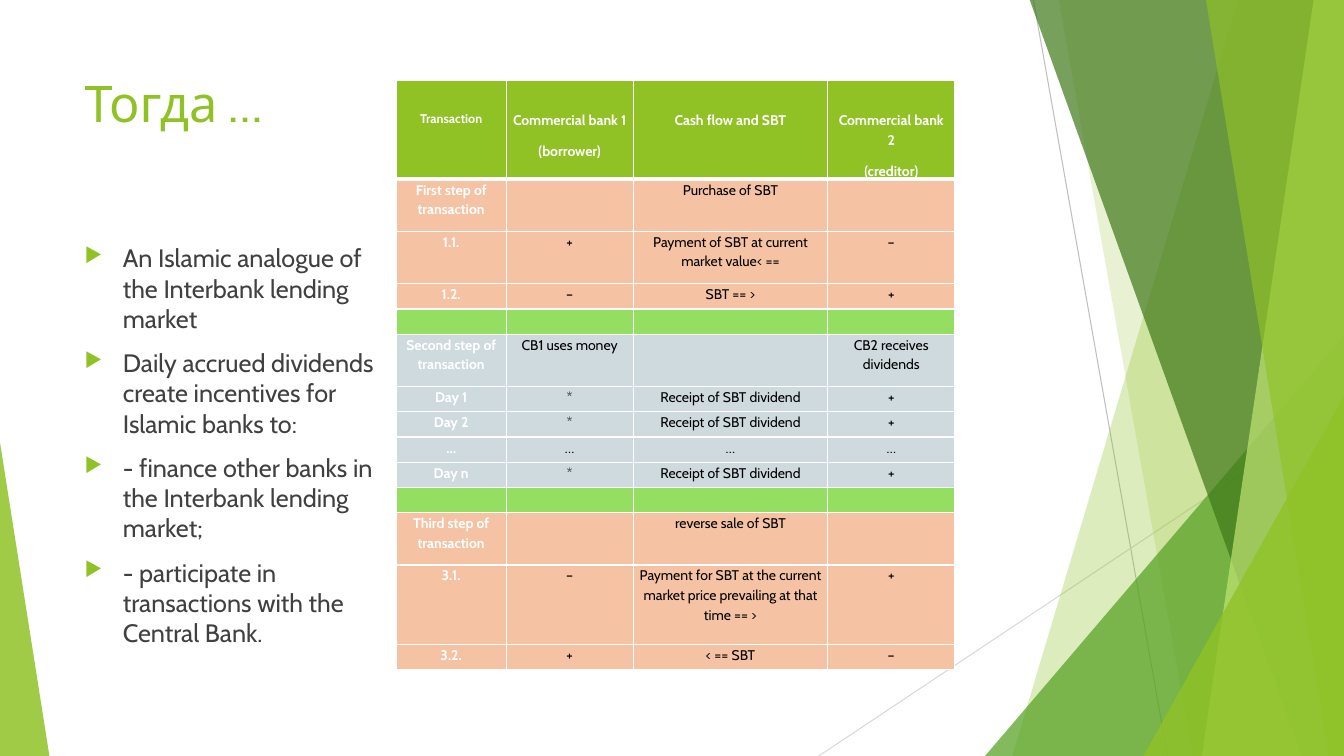
from lxml.etree import SubElement
from pptx import Presentation
from pptx.dml.color import RGBColor
from pptx.enum.shapes import MSO_CONNECTOR, MSO_SHAPE
from pptx.enum.text import PP_ALIGN
from pptx.oxml.ns import qn
from pptx.util import Pt

PX = 9144  # 100 px to the inch
WIDTH, HEIGHT = 1333, 750
FONT = "Cabin"
COLOURS = {
    "lime": "90C226", "green": "54A021", "forest": "3F7819", "pale": "C0E474",
    "silver": "BFBFBF", "mist": "D9D9D9", "text": "404040", "black": "000000",
    "white": "FFFFFF", "peach": "F5C2A3", "gap": "94DE61", "steel": "CFDADF",
}


def rgb(name):
    return RGBColor.from_string(COLOURS[name])


def style(paragraph, size, colour, bold=False):
    paragraph.font.name = FONT
    paragraph.font.size = Pt(size)
    paragraph.font.color.rgb = rgb(colour)
    paragraph.font.bold = bold


presentation = Presentation()
presentation.slide_width, presentation.slide_height = WIDTH * PX, HEIGHT * PX
slide = presentation.slides.add_slide(presentation.slide_layouts[6])
shapes = slide.shapes

# Thin crossing lines
for x1, y1, x2, y2, colour in [
    (1025, 0, 1158, 750, "silver"),
    (1333, 403, 812, 750, "mist"),
]:
    ray = shapes.add_connector(
        MSO_CONNECTOR.STRAIGHT, x1 * PX, y1 * PX, x2 * PX, y2 * PX)
    ray.line.color.rgb = rgb(colour)
    ray.line.width = Pt(0.75)
    SubElement(ray._element.spPr, qn("a:effectLst"))

# Facets: a band to the right edge is (top x, bottom x),
# a triangle on the bottom edge is (left, top, width, apex)
facets = [
    ((1228, 1004), "lime", 30),
    ((1050, 1183), "lime", 20),
    ((977, 333, 356, 1), "green", 72),
    ((1021, 1291), "forest", 70),
    ((1303, 1192), "pale", 70),
    ((1196, 1318), "lime", 65),
    ((1134, 393, 199, 1), "lime", 80),
    ((0, 439, 49, 0), "lime", 85),
]
for outline, colour, opacity in facets:
    if len(outline) == 2:
        top_x, bottom_x = outline
        builder = shapes.build_freeform(top_x, -1, scale=PX)
        builder.add_line_segments(
            [(WIDTH, -1), (WIDTH, HEIGHT), (bottom_x, HEIGHT)], close=True)
        facet = builder.convert_to_shape()
    else:
        left, top, width, apex = outline
        facet = shapes.add_shape(
            MSO_SHAPE.ISOSCELES_TRIANGLE,
            left * PX, top * PX, width * PX, (HEIGHT - top) * PX)
        facet.adjustments[0] = apex
    facet.shadow.inherit = False
    facet.line.fill.background()
    facet.fill.solid()
    facet.fill.fore_color.rgb = rgb(colour)
    solid_colour = facet._element.spPr.find(qn("a:solidFill"))[0]
    SubElement(solid_colour, qn("a:alpha"), val=str(opacity * 1000))

title = shapes.add_textbox(74 * PX, 67 * PX, 940 * PX, 144 * PX).text_frame
title.word_wrap = True
title.text = "Тогда …"
style(title.paragraphs[0], 36, "lime")

points = shapes.add_textbox(74 * PX, 236 * PX, 319 * PX, 424 * PX).text_frame
points.word_wrap = True
points.text = "\n".join([
    "An Islamic analogue of the Interbank lending market",
    "Daily accrued dividends create incentives for Islamic banks to:",
    "- finance other banks in the Interbank lending market;",
    "- participate in transactions with the Central Bank.",
])
for point in points.paragraphs:
    point.space_before = Pt(10)
    properties = point._p.get_or_add_pPr()
    properties.set("marL", str(38 * PX))
    properties.set("indent", str(-38 * PX))
    bullet_colour = SubElement(properties, qn("a:buClr"))
    SubElement(bullet_colour, qn("a:srgbClr"), val=COLOURS["lime"])
    SubElement(properties, qn("a:buSzPct"), val="80000")
    SubElement(properties, qn("a:buChar"), char="▶")
    style(point, 18, "text")

# Each row: height, fill, cell texts
blank = ("", "", "", "")
transactions = [
    (92, "lime", ("Transaction", "Commercial bank 1\n(borrower)",
                  "Cash flow and SBT", "Commercial bank 2\n(creditor)")),
    (52, "peach", ("First step of transaction", "", "Purchase of SBT", "")),
    (52, "peach", ("1.1.", "+", "Payment of SBT at current market value< ==", "–")),
    (25, "peach", ("1.2.", "–", "SBT == >", "+")),
    (25, "gap", blank),
    (52, "steel", ("Second step of transaction", "CB1 uses money", "",
                   "CB2 receives dividends")),
    (25, "steel", ("Day 1", "*", "Receipt of SBT dividend", "+")),
    (25, "steel", ("Day 2", "*", "Receipt of SBT dividend", "+")),
    (25, "steel", ("…", "…", "…", "…")),
    (25, "steel", ("Day n", "*", "Receipt of SBT dividend", "+")),
    (25, "gap", blank),
    (52, "peach", ("Third step of transaction", "", "reverse sale of SBT", "")),
    (79, "peach", ("3.1.", "–", "Payment for SBT at the current market price "
                   "prevailing at that time == >", "+")),
    (25, "peach", ("3.2.", "+", "< == SBT", "–")),
]
column_widths = [109, 126, 193, 126]
schedule = shapes.add_table(
    len(transactions), len(column_widths), 393 * PX, 80 * PX,
    sum(column_widths) * PX, sum(row[0] for row in transactions) * PX).table
for column, width in zip(schedule.columns, column_widths):
    column.width = width * PX

for row, (height, fill, texts) in enumerate(transactions):
    schedule.rows[row].height = height * PX
    for column, text in enumerate(texts):
        cell = schedule.cell(row, column)
        heading = row == 0
        label = heading or column == 0
        size = 9 if heading and column == 0 else 10
        cell.margin_left = cell.margin_right = 6 * PX
        cell.margin_top = (19 + size) * PX if heading else 0
        cell.margin_bottom = 0
        cell.text = text
        for paragraph in cell.text_frame.paragraphs:
            paragraph.alignment = PP_ALIGN.CENTER
            paragraph.line_spacing = 1.15
            paragraph.space_after = Pt(8)
            style(paragraph, size, "white" if label else "black", label)
            if not text:
                paragraph._p.get_or_add_endParaRPr().set("sz", "1000")
        for side in ("L", "R", "T", "B"):
            under_heading = (row, side) in [(0, "B"), (1, "T")]
            border = SubElement(cell._tc.get_or_add_tcPr(), qn(f"a:ln{side}"),
                                w=str(Pt(3 if under_heading else 1)))
            border_fill = SubElement(border, qn("a:solidFill"))
            SubElement(border_fill, qn("a:srgbClr"), val=COLOURS["white"])
        cell.fill.solid()
        cell.fill.fore_color.rgb = rgb(fill)

presentation.save("out.pptx")
